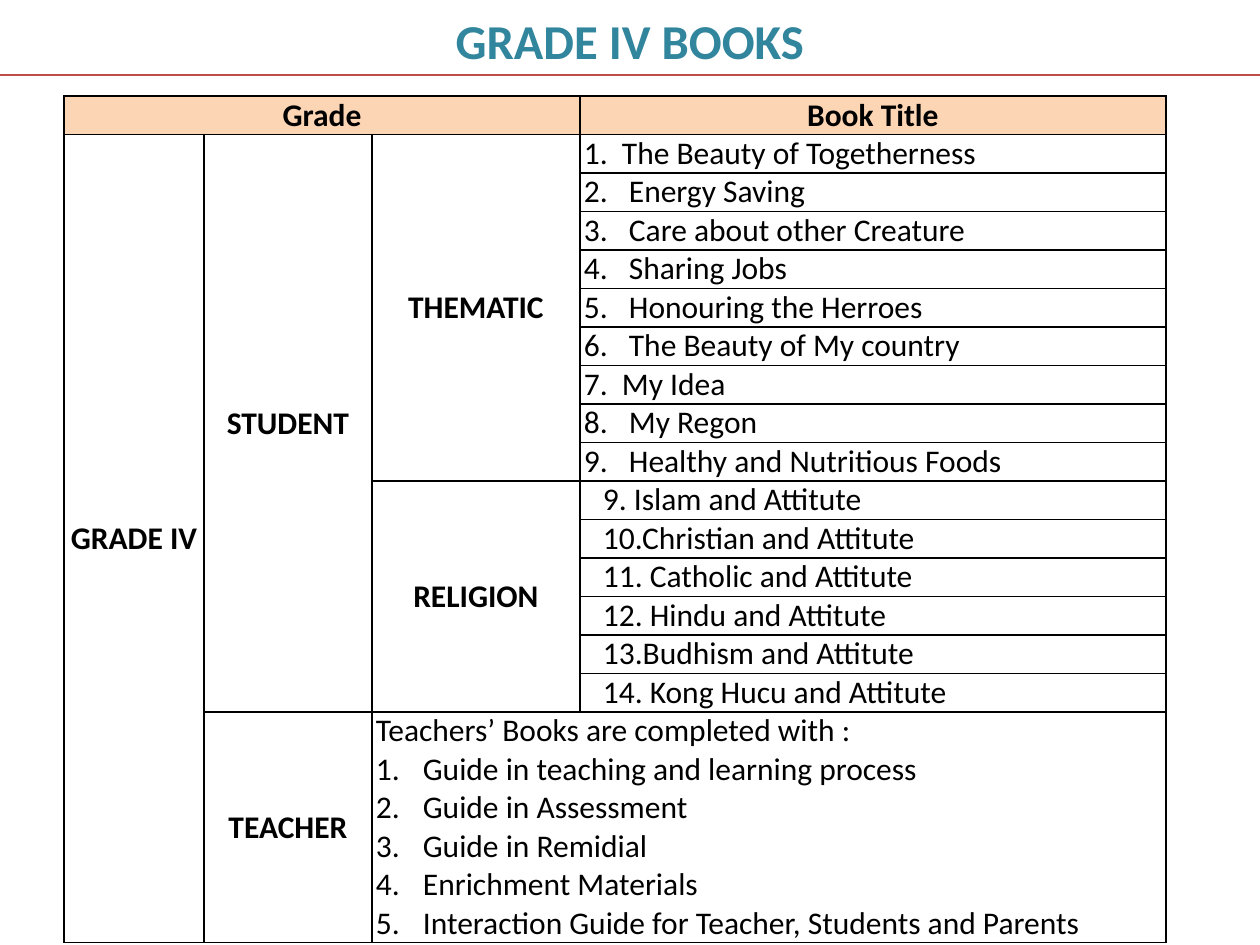
import pptx
import pptx.dml.color
import pptx.enum.shapes
import pptx.enum.text
import pptx.oxml.ns
import pptx.util
from lxml import etree

EMU_PER_PX = 914400 / 126
FONT = "Calibri"
COLORS = {"title": "31859C", "rule": "BF4C48", "header": "FCD5B5", "ink": "000000"}
ALIGN = pptx.enum.text.PP_ALIGN
ANCHOR = pptx.enum.text.MSO_ANCHOR

COLUMN_WIDTHS = [140, 168, 208, 586]
ROW_HEIGHT = 38
THEMATIC_BOOKS = [
    "The Beauty of Togetherness",
    "Energy Saving",
    "Care about other Creature",
    "Sharing Jobs",
    "Honouring the Herroes",
    "The Beauty of My country",
    "My Idea",
    "My Regon",
    "Healthy and Nutritious Foods",
]
NARROW_NUMBERS = (1, 7)
RELIGION_BOOKS = [
    "9. Islam and Attitute",
    "10.Christian and Attitute",
    "11. Catholic and Attitute",
    "12. Hindu and Attitute",
    "13.Budhism and Attitute",
    "14. Kong Hucu and Attitute",
]
TEACHER_INTRO = "Teachers’ Books are completed with :"
TEACHER_GUIDES = [
    "Guide in teaching and learning process",
    "Guide in Assessment",
    "Guide in Remidial",
    "Enrichment Materials",
    "Interaction Guide for Teacher, Students and Parents",
]


def px(length):
    """Turn a length in px into EMU."""
    return pptx.util.Emu(round(length * EMU_PER_PX))


def rgb(name):
    """Look up a named colour."""
    return pptx.dml.color.RGBColor.from_string(COLORS[name])


def add_child(parent, tag, **attributes):
    """Append a DrawingML element to a parent element."""
    return etree.SubElement(parent, pptx.oxml.ns.qn(tag), **attributes)


def write_text(paragraph, text, size=18, color="ink", bold=False, align=ALIGN.LEFT,
               left=0, first=0, numbered=False):
    """Write one formatted paragraph, with margins in px."""
    paragraph.alignment = align
    properties = paragraph._p.get_or_add_pPr()
    properties.set("marL", str(px(left)))
    properties.set("indent", str(px(first)))
    if numbered:
        add_child(properties, "a:buFont", typeface="+mj-lt")
        add_child(properties, "a:buAutoNum", type="arabicPeriod")
    run = paragraph.add_run()
    run.text = text
    run.font.name = FONT
    run.font.size = pptx.util.Pt(size)
    run.font.bold = bold
    run.font.color.rgb = rgb(color)


def set_margins(target, side, top=0):
    """Set the inner margins of a cell or text frame."""
    target.margin_left = target.margin_right = px(side)
    target.margin_top = px(top)
    target.margin_bottom = 0


def style_cell(cell, fill=None):
    """Give a cell its black borders, margins and fill."""
    set_margins(cell, 4)
    properties = cell._tc.get_or_add_tcPr()
    for side in "LRTB":
        border = add_child(properties, f"a:ln{side}", w=str(pptx.util.Pt(1)))
        solid = add_child(border, "a:solidFill")
        add_child(solid, "a:srgbClr", val=COLORS["ink"])
    if fill:
        cell.fill.solid()
        cell.fill.fore_color.rgb = rgb(fill)
    else:
        cell.fill.background()


def add_label(table, text, row, column, last_row=None, last_column=None):
    """Write a bold centred label in a cell, merged to its last row and column."""
    cell = table.cell(row, column)
    end = table.cell(last_row or row, last_column or column)
    if end._tc is not cell._tc:
        cell.merge(end)
    cell.vertical_anchor = ANCHOR.MIDDLE
    write_text(cell.text_frame.paragraphs[0], text, bold=True, align=ALIGN.CENTER)


def add_title(slide):
    """Place the slide title in its placeholder."""
    title = slide.shapes.title
    title.left, title.top, title.width, title.height = px(0), px(0), px(1260), px(75)
    frame = title.text_frame
    frame.auto_size = pptx.enum.text.MSO_AUTO_SIZE.NONE
    frame.vertical_anchor = ANCHOR.MIDDLE
    set_margins(frame, 12, top=5)
    write_text(frame.paragraphs[0], "GRADE IV BOOKS", size=27.8, color="title",
               bold=True, align=ALIGN.CENTER)


def add_rule(slide, y):
    """Draw a line across the slide."""
    rule = slide.shapes.add_connector(
        pptx.enum.shapes.MSO_CONNECTOR.STRAIGHT, px(0), px(y), px(1260), px(y))
    rule.line.color.rgb = rgb("rule")
    rule.line.width = pptx.util.Pt(0.75)
    add_child(rule._element.spPr, "a:effectLst")


def add_grid(slide, left, top, heights):
    """Add a bordered table with a coloured header row."""
    table = slide.shapes.add_table(
        len(heights), len(COLUMN_WIDTHS), px(left), px(top),
        px(sum(COLUMN_WIDTHS)), px(sum(heights))).table
    table.first_row = table.horz_banding = False
    for column, width in zip(table.columns, COLUMN_WIDTHS):
        column.width = px(width)
    for index, (row, height) in enumerate(zip(table.rows, heights)):
        row.height = px(height)
        for cell in row.cells:
            style_cell(cell, None if index else "header")
    return table


def fill_books(table, religion_row):
    """List the student books in the last column."""
    for number, book in enumerate(THEMATIC_BOOKS, 1):
        gap = 38 if number in NARROW_NUMBERS else 45
        write_text(table.cell(number, 3).text_frame.paragraphs[0],
                   f"{number}.\t{book}", left=gap, first=-gap)
    for row, book in enumerate(RELIGION_BOOKS, religion_row):
        cell = table.cell(row, 3)
        set_margins(cell, 5)
        write_text(cell.text_frame.paragraphs[0], book, first=18)


def fill_teacher(table, row):
    """List the contents of the teachers' books."""
    cell = table.cell(row, 2)
    cell.merge(table.cell(row, 3))
    cell.vertical_anchor = ANCHOR.MIDDLE
    frame = cell.text_frame
    write_text(frame.paragraphs[0], TEACHER_INTRO)
    for guide in TEACHER_GUIDES:
        write_text(frame.add_paragraph(), guide, left=47, first=-47, numbered=True)


def main():
    """Build the slide and save it."""
    presentation = pptx.Presentation()
    presentation.slide_width, presentation.slide_height = px(1260), px(945)
    slide = presentation.slides.add_slide(presentation.slide_layouts[5])
    religion_row = 1 + len(THEMATIC_BOOKS)
    teacher_row = religion_row + len(RELIGION_BOOKS)
    teacher_height = ROW_HEIGHT * (1 + len(TEACHER_GUIDES))
    table = add_grid(slide, 64, 96, [ROW_HEIGHT] * teacher_row + [teacher_height])
    add_label(table, "Grade", 0, 0, last_column=2)
    add_label(table, "Book Title", 0, 3)
    add_label(table, "GRADE IV", 1, 0, last_row=teacher_row)
    add_label(table, "STUDENT", 1, 1, last_row=teacher_row - 1)
    add_label(table, "THEMATIC", 1, 2, last_row=religion_row - 1)
    add_label(table, "RELIGION", religion_row, 2, last_row=teacher_row - 1)
    add_label(table, "TEACHER", teacher_row, 1)
    fill_books(table, religion_row)
    fill_teacher(table, teacher_row)
    add_title(slide)
    add_rule(slide, 75)
    presentation.save("out.pptx")


if __name__ == "__main__":
    main()
